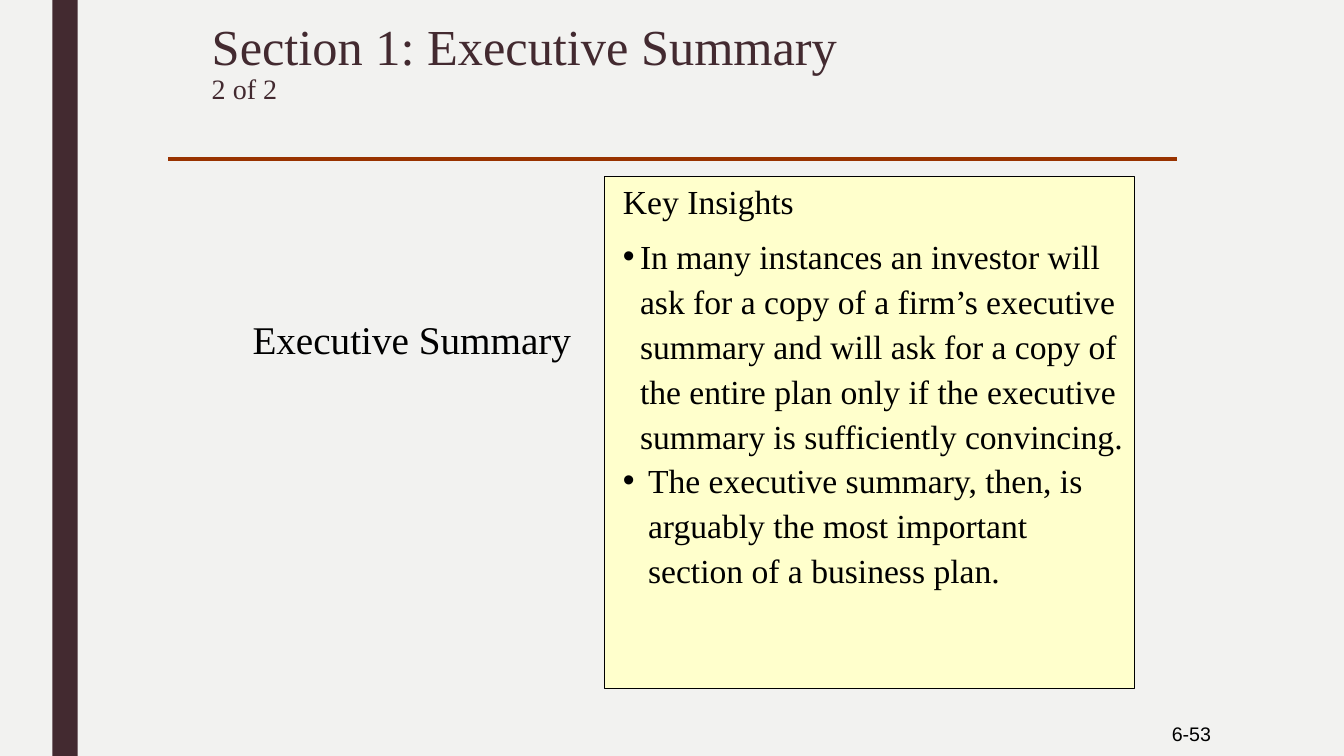
from lxml import etree
from pptx import Presentation
from pptx.dml.color import RGBColor
from pptx.enum.shapes import MSO_CONNECTOR, MSO_SHAPE
from pptx.enum.text import MSO_ANCHOR, MSO_AUTO_SIZE, PP_ALIGN
from pptx.oxml.ns import qn
from pptx.util import Inches, Pt

LEFT, CENTER, RIGHT = PP_ALIGN.LEFT, PP_ALIGN.CENTER, PP_ALIGN.RIGHT
TOP, MIDDLE = MSO_ANCHOR.TOP, MSO_ANCHOR.MIDDLE
RECTANGLE, STRAIGHT = MSO_SHAPE.RECTANGLE, MSO_CONNECTOR.STRAIGHT
NO_FIT = MSO_AUTO_SIZE.NONE
SERIF, SANS = "Times New Roman", "Arial"
PLUM, BLACK = "432A30", "000000"
TITLE_ONLY = 5

# Each insight: hanging indent in inches and its lines
INSIGHTS = [
    (0.17, ["In many instances an investor will",
            "ask for a copy of a firm’s executive",
            "summary and will ask for a copy of",
            "the entire plan only if the executive",
            "summary is sufficiently convincing."]),
    (0.25, ["The executive summary, then, is",
            "arguably the most important",
            "section of a business plan."]),
]


def color(value):
    return RGBColor.from_string(value)


def apply(target, formats):
    for name, value in formats.items():
        setattr(target, name, value)


def style_span(span, size, font=SERIF, ink=BLACK):
    apply(span.font, {"size": Pt(size), "name": font, "bold": False})
    span.font.color.rgb = color(ink)


def add_bar(page, box, fill, line=None):
    bar = page.shapes.add_shape(RECTANGLE, *map(Inches, box))
    bar.shadow.inherit = False
    bar.fill.solid()
    bar.fill.fore_color.rgb = color(fill)
    if line:
        bar.line.color.rgb = color(line)
        bar.line.width = Pt(0.75)
    else:
        bar.line.fill.background()


def add_text_frame(page, box, anchor=TOP):
    frame = page.shapes.add_textbox(*map(Inches, box)).text_frame
    apply(frame, {"word_wrap": True, "vertical_anchor": anchor})
    return frame


def add_label(page, box, text, size, font=SERIF, align=LEFT, anchor=TOP):
    para = add_text_frame(page, box, anchor).paragraphs[0]
    para.alignment = align
    span = para.add_run()
    span.text = text
    style_span(span, size, font)


def add_rule(page, left, top, width):
    rule = page.shapes.add_connector(
        STRAIGHT, *map(Inches, (left, top, left + width, top)))
    rule.line.color.rgb = color("993300")
    rule.line.width = Pt(3)
    properties = rule._element.find(qn("p:spPr"))
    etree.SubElement(properties, qn("a:effectLst"))


def fill_title(page, box, heading, counter):
    title = page.shapes.title
    left, top, width, height = map(Inches, box)
    apply(title, {"left": left, "top": top, "width": width, "height": height})
    apply(title.text_frame, {"vertical_anchor": TOP, "word_wrap": True,
                             "auto_size": NO_FIT})
    para = title.text_frame.paragraphs[0]
    apply(para, {"alignment": LEFT, "line_spacing": 0.89})
    for text, size in ((heading, 36), (counter, 20)):
        if para.runs:
            para.add_line_break()
        span = para.add_run()
        span.text = text
        style_span(span, size, ink=PLUM)


def add_bullet(para, indent):
    properties = para._p.get_or_add_pPr()
    properties.set("marL", str(Inches(indent)))
    properties.set("indent", str(-Inches(indent)))
    etree.SubElement(properties, qn("a:buFont"), typeface=SANS)
    etree.SubElement(properties, qn("a:buChar"), char="•")


def add_insights(page, box):
    """Yellow panel with a heading and the bulleted insights."""
    left, top, width, height = box
    add_bar(page, box, "FFFFCC", BLACK)
    add_label(page, (left + 0.08, top, width - 0.17, 0.51), "Key Insights", 24)
    frame = add_text_frame(page, (left + 0.08, top + 0.5, width - 0.08, 3.66))
    frame.margin_right = 0
    for number, (indent, lines) in enumerate(INSIGHTS):
        para = frame.add_paragraph() if number else frame.paragraphs[0]
        para.line_spacing = Pt(32)
        add_bullet(para, indent)
        para.text = "\v".join(lines)
        for span in para.runs:
            style_span(span, 24)


def build_page(deck):
    page = deck.slides.add_slide(deck.slide_layouts[TITLE_ONLY])
    page.background.fill.solid()
    page.background.fill.fore_color.rgb = color("F2F2F0")
    add_bar(page, (0.52, 0, 0.25, 7.5), PLUM)
    add_rule(page, 1.67, 1.58, 10)
    add_label(page, (1.92, 3.08, 4.33, 0.57), "Executive Summary", 28,
              align=CENTER)
    add_insights(page, (6, 1.75, 5.25, 5.08))
    fill_title(page, (2, 0.17, 9.42, 1.25),
               "Section 1: Executive Summary", "2 of 2")
    add_label(page, (10.36, 7.06, 1.75, 0.44), "6-53", 14, SANS, RIGHT, MIDDLE)


def main():
    deck = Presentation()
    apply(deck, {"slide_width": Inches(13.33), "slide_height": Inches(7.5)})
    build_page(deck)
    deck.save("out.pptx")


if __name__ == "__main__":
    main()
